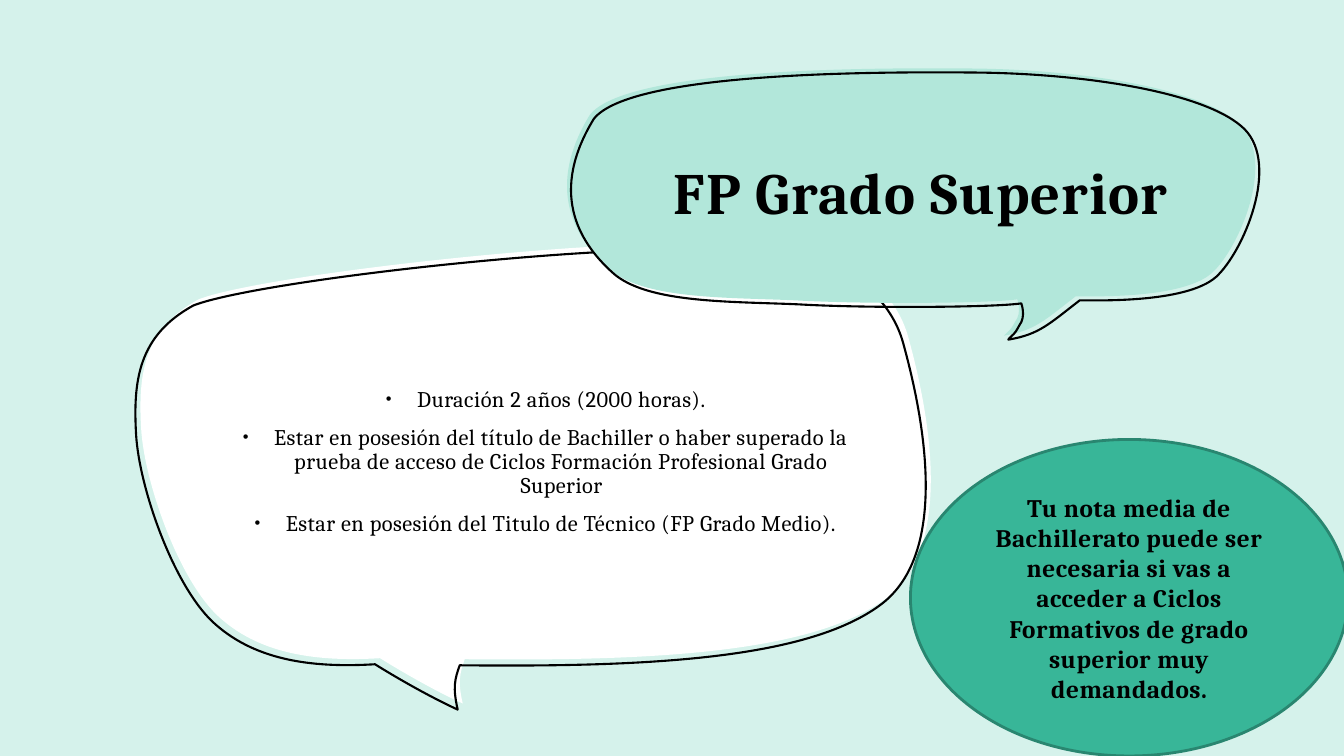
from dataclasses import dataclass

from lxml.etree import SubElement
from pptx import Presentation
from pptx.dml.color import RGBColor as RGB
from pptx.enum.shapes import MSO_SHAPE as Preset
from pptx.enum.text import MSO_ANCHOR as Anchor, MSO_AUTO_SIZE as AutoSize, PP_ALIGN as Align
from pptx.oxml.ns import qn
from pptx.util import Inches, Pt


@dataclass(frozen=True)
class Theme:
    background: RGB = RGB(0xD5, 0xF2, 0xEB)
    mint: RGB = RGB(0xB2, 0xE7, 0xDA)
    white: RGB = RGB(0xFF, 0xFF, 0xFF)
    ink: RGB = RGB(0, 0, 0)
    green: RGB = RGB(0x38, 0xB6, 0x98)
    dark_green: RGB = RGB(0x29, 0x86, 0x70)
    font: str = "Cambria"
    title_size: float = 41.8
    body_size: float = 16
    note_size: float = 18
    title_tracking: float = 0.86
    body_tracking: float = 0.37
    note_tracking: float = 0.4


THEME = Theme()
SLIDE_SIZE = (13.33, 7.5)

# Bubble outlines in inches from the bubble's corner: a start point, then
# cubic curves given as two control points and an end point
BODY_START = (2.37, 4.12)
BODY_CURVES = [
    ((1.71, 4.16), (1.15, 4.07), (0.75, 3.69)),
    ((0.36, 3.31), (0.03, 2.36), (0, 1.84)),
    ((-0.03, 1.31), (0.02, 0.86), (0.57, 0.56)),
    ((1.21, 0.31), (4.86, -0.11), (6.36, 0.02)),
    ((7.06, 0.1), (7.49, 0.49), (7.61, 0.94)),
    ((7.78, 1.56), (8.11, 3.01), (7.37, 3.54)),
    ((6.64, 4.07), (5.08, 4.15), (3.21, 4.13)),
    ((3.16, 4.27), (3.14, 4.35), (3.19, 4.57)),
    ((2.78, 4.38), (2.37, 4.12), (2.37, 4.12)),
]
TITLE_START = (4.47, 2.29)
TITLE_CURVES = [
    ((4.22, 2.33), (2.95, 2.34), (2.26, 2.3)),
    ((1.57, 2.27), (0.74, 2.29), (0.41, 1.98)),
    ((0.07, 1.67), (-0.21, 1.18), (0.23, 0.46)),
    ((0.59, 0), (2.95, -0.01), (4.02, 0)),
    ((5.09, 0.01), (6.25, 0.19), (6.65, 0.53)),
    ((7.05, 0.86), (6.7, 1.72), (6.43, 2)),
    ((6.17, 2.29), (5.23, 2.26), (5.05, 2.26)),
    ((4.75, 2.49), (4.65, 2.6), (4.34, 2.65)),
    ((4.4, 2.58), (4.39, 2.62), (4.45, 2.51)),
    ((4.52, 2.42), (4.47, 2.29), (4.47, 2.29)),
]

REQUIREMENTS = [
    "Duración 2 años (2000 horas).",
    "Estar en posesión del título de Bachiller o haber superado la "
    "prueba de acceso de Ciclos Formación Profesional Grado Superior",
    "Estar en posesión del Titulo de Técnico (FP Grado Medio).",
]
NOTE = ("Tu nota media de Bachillerato puede ser necesaria si vas a acceder a "
        "Ciclos Formativos de grado superior muy demandados.")


def place(shape, left, top, width, height):
    shape.left, shape.top = Inches(left), Inches(top)
    shape.width, shape.height = Inches(width), Inches(height)


def paint(shape, colour):
    shape.shadow.inherit = False
    shape.fill.solid()
    shape.fill.fore_color.rgb = colour


def add_segment(path, tag, points):
    segment = SubElement(path, qn(tag))
    for x, y in points:
        SubElement(segment, qn("a:pt"), x=str(Inches(x)), y=str(Inches(y)))


def add_outline(slide, box, start, curves):
    """A freeform through the curve ends, whose straight segments become curves."""
    ends = [(Inches(x), Inches(y)) for *_, (x, y) in curves]
    builder = slide.shapes.build_freeform(Inches(start[0]), Inches(start[1]), scale=1.0)
    builder.add_line_segments(ends, close=True)
    shape = builder.convert_to_shape()
    shape.shadow.inherit = False
    place(shape, *box)

    path = next(shape.element.iter(qn("a:path")))
    for segment in list(path):
        path.remove(segment)
    path.set("w", str(shape.width))
    path.set("h", str(shape.height))
    add_segment(path, "a:moveTo", [start])
    for curve in curves:
        add_segment(path, "a:cubicBezTo", curve)
    SubElement(path, qn("a:close"))
    return shape


def add_bubble(slide, box, start, curves, colour, shift):
    """A filled bubble with a shifted ink outline."""
    filling = add_outline(slide, box, start, curves)
    paint(filling, colour)
    filling.line.fill.background()

    left, top, width, height = box
    shifted = (left + shift[0], top + shift[1], width, height)
    outline = add_outline(slide, shifted, start, curves)
    outline.fill.background()
    outline.line.color.rgb = THEME.ink
    outline.line.width = Pt(1.5)


def add_text(paragraph, text, size, tracking, bold=False):
    paragraph.alignment = Align.CENTER
    run = paragraph.add_run()
    run.text = text
    run.font.name = THEME.font
    run.font.size = Pt(size)
    run.font.bold = bold
    run.font.color.rgb = THEME.ink
    run._r.get_or_add_rPr().set("spc", str(round(tracking * 100)))


def add_bullet(paragraph):
    properties = paragraph._p.get_or_add_pPr()
    properties.set("marL", str(Inches(0.31)))
    properties.set("indent", str(Inches(-0.31)))
    colour = SubElement(properties, qn("a:buClr"))
    SubElement(colour, qn("a:srgbClr"), val=str(THEME.ink))
    SubElement(properties, qn("a:buSzPct"), val="73000")
    SubElement(properties, qn("a:buFont"), typeface="Arial")
    SubElement(properties, qn("a:buChar"), char="•")


def place_text(shape, *box):
    """Move a placeholder to its box, in front of what is already drawn."""
    place(shape, *box)
    shape.element.getparent().append(shape.element)
    frame = shape.text_frame
    frame.word_wrap = True
    frame.auto_size = AutoSize.NONE
    frame.vertical_anchor = Anchor.MIDDLE
    return frame


def build_background(slide, width, height):
    backdrop = slide.shapes.add_shape(Preset.RECTANGLE, 0, 0, Inches(width), Inches(height))
    paint(backdrop, THEME.background)
    backdrop.line.fill.background()
    slide.background.fill.solid()
    slide.background.fill.fore_color.rgb = THEME.background


def build_title(slide, left, top, width, height):
    frame = place_text(slide.shapes.title, left + 0.81, top + 0.51, width - 1.42, height - 1.17)
    paragraph = frame.paragraphs[0]
    paragraph.line_spacing = 0.9
    add_text(paragraph, "FP Grado Superior", THEME.title_size, THEME.title_tracking, bold=True)


def build_requirements(slide, left, top, width, height):
    frame = place_text(slide.placeholders[1], left + 0.81, top + 0.73, width - 1.43, height - 1.69)
    for index, text in enumerate(REQUIREMENTS):
        paragraph = frame.add_paragraph() if index else frame.paragraphs[0]
        add_bullet(paragraph)
        paragraph.line_spacing = 0.9
        paragraph.space_before = Pt(10 if index else 0)
        add_text(paragraph, text, THEME.body_size, THEME.body_tracking)


def build_note(slide, *box):
    oval = slide.shapes.add_shape(Preset.OVAL, *map(Inches, box))
    paint(oval, THEME.green)
    oval.line.color.rgb = THEME.dark_green
    oval.line.width = Pt(2)
    frame = oval.text_frame
    frame.word_wrap = True
    frame.vertical_anchor = Anchor.MIDDLE
    add_text(frame.paragraphs[0], NOTE, THEME.note_size, THEME.note_tracking, bold=True)


def main():
    presentation = Presentation()
    presentation.slide_width, presentation.slide_height = map(Inches, SLIDE_SIZE)
    slide = presentation.slides.add_slide(presentation.slide_layouts[1])
    build_background(slide, *SLIDE_SIZE)

    # Speech bubbles
    body_box = (1.4, 2.41, 7.84, 4.58)
    title_box = (5.62, 0.68, 6.83, 2.66)
    add_bubble(slide, body_box, BODY_START, BODY_CURVES, THEME.white, (-0.05, 0.06))
    add_bubble(slide, title_box, TITLE_START, TITLE_CURVES, THEME.mint, (0.04, 0.04))

    # Text in the bubbles, then the side note
    build_title(slide, *title_box)
    build_requirements(slide, *body_box)
    build_note(slide, 9.03, 4.36, 4.34, 3.14)

    presentation.save("out.pptx")


if __name__ == "__main__":
    main()
